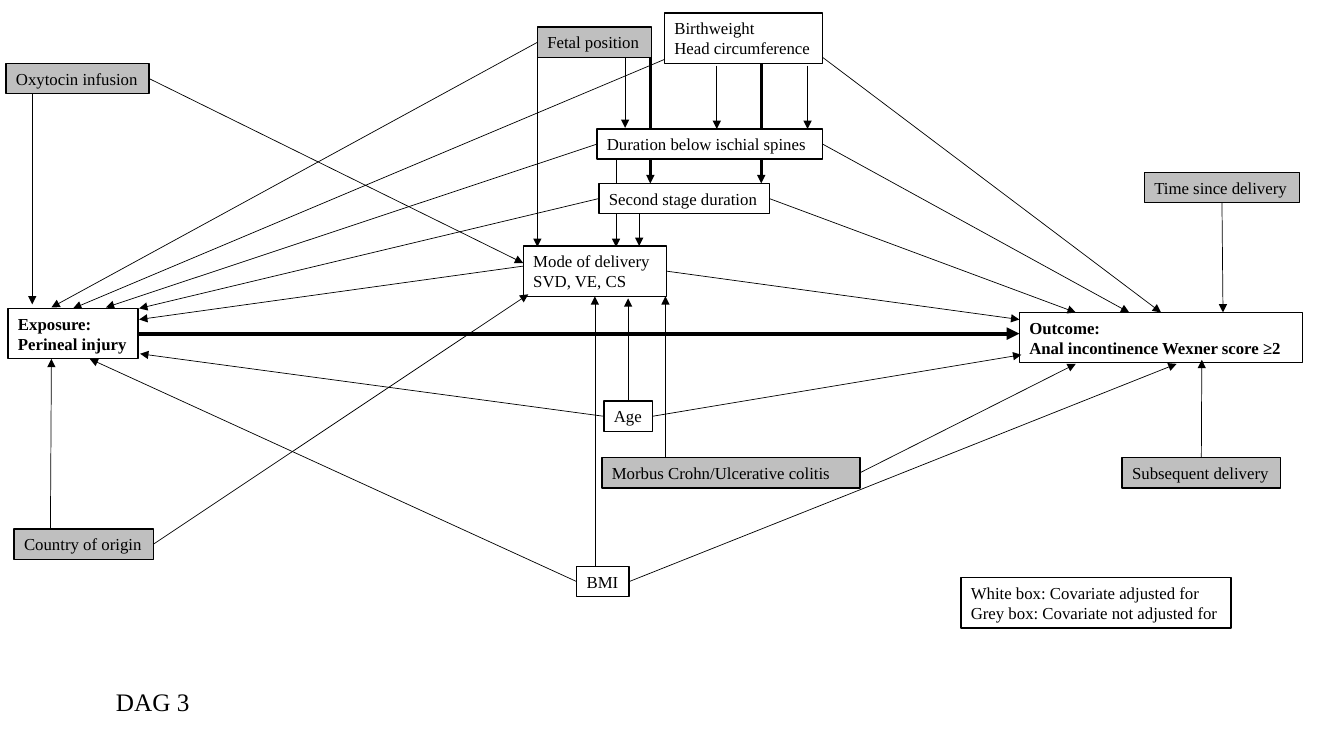
from dataclasses import dataclass
from typing import NamedTuple

from lxml.etree import SubElement
from pptx import Presentation
from pptx.dml.color import RGBColor
from pptx.enum.shapes import MSO_CONNECTOR, MSO_SHAPE
from pptx.enum.text import MSO_ANCHOR, MSO_AUTO_SIZE, PP_ALIGN
from pptx.oxml.ns import qn
from pptx.util import Inches, Pt

RECTANGLE = MSO_SHAPE.RECTANGLE
STRAIGHT = MSO_CONNECTOR.STRAIGHT
GROW = MSO_AUTO_SIZE.SHAPE_TO_FIT_TEXT
ANCHOR_TOP = MSO_ANCHOR.TOP
ALIGN_LEFT = PP_ALIGN.LEFT

COLS, ROWS = 133.3, 75
CELL = 0.1
BLACK, WHITE, GREY = "000000", "FFFFFF", "BFBFBF"
FONT = {"name": "Times New Roman", "size": Pt(12), "bold": False}
FRAME = {"word_wrap": False, "auto_size": GROW, "vertical_anchor": ANCHOR_TOP}
INSETS = {"margin_left": Inches(0.1), "margin_right": Inches(0.1),
          "margin_top": Inches(0.05), "margin_bottom": Inches(0.05)}
TOP, LEFT, BOTTOM, RIGHT = range(4)


class Point(NamedTuple):
    col: float
    row: float


class Port(NamedTuple):
    box: str
    side: int


@dataclass
class Box:
    col: float
    row: float
    cols: float
    text: str
    fill: str | None = WHITE
    bold: bool = False
    wrap: bool = False

    @property
    def rows(self) -> int:
        return 1 + 2 * len(self.text.split("\n"))


@dataclass
class Arrow:
    start: Point | Port
    end: Point | Port
    width: float = 0.5


BOXES = {
    "outcome": Box(101.1, 31, 28.1, "Outcome:\nAnal incontinence Wexner score ≥2", None, True, True),
    "exposure": Box(0.8, 30.6, 12.9, "Exposure:\nPerineal injury", None, True),
    "time": Box(113.5, 17.1, 15.4, "Time since delivery", GREY),
    "subsequent": Box(111.3, 45.4, 15.7, "Subsequent delivery", GREY),
    "spines": Box(59.2, 12.8, 22.4, "Duration below ischial spines"),
    "second stage": Box(59.4, 18.2, 16.9, "Second stage duration"),
    "mode": Box(51.9, 24.4, 14.2, "Mode of delivery\nSVD, VE, CS"),
    "birthweight": Box(65.9, 1.3, 15.7, "Birthweight\nHead circumference"),
    "fetal": Box(53.3, 2.7, 11.3, "Fetal position", GREY),
    "crohn": Box(59.7, 45.4, 25.6, "Morbus Crohn/Ulcerative colitis", GREY, wrap=True),
    "bmi": Box(57.2, 56.2, 5.2, "BMI"),
    "age": Box(59.9, 39.8, 4.8, "Age"),
    "oxytocin": Box(0.6, 6.3, 14.2, "Oxytocin infusion", GREY),
    "country": Box(1.4, 52.5, 13.8, "Country of origin", GREY),
    "key": Box(95.3, 57.3, 26.8, "White box: Covariate adjusted for\nGrey box: Covariate not adjusted for"),
}

ARROWS_BEHIND = [
    Arrow(Point(61.1, 15.8), Point(61.1, 24.5)),
    Arrow(Point(75.5, 6.4), Point(75.5, 18.2), 0),
    Arrow(Point(64.5, 3.5), Point(64.5, 18.2), 0),
]

ARROWS = [
    Arrow(Port("exposure", RIGHT), Point(101.1, 33.1), 3),
    Arrow(Port("time", BOTTOM), Point(121.3, 31)),
    Arrow(Port("subsequent", TOP), Point(119.2, 35.7)),
    Arrow(Port("spines", LEFT), Point(10.5, 30.5)),
    Arrow(Port("spines", RIGHT), Point(112, 31)),
    Arrow(Point(51.9, 26.4), Point(13.8, 31.7)),
    Arrow(Port("mode", RIGHT), Point(101.1, 31.7)),
    Arrow(Point(63.4, 21.2), Point(63.4, 24.4)),
    Arrow(Port("second stage", RIGHT), Point(106.7, 31)),
    Arrow(Port("second stage", LEFT), Point(13.8, 30.6)),
    Arrow(Point(65.9, 5.9), Port("exposure", TOP)),
    Arrow(Point(81.6, 5.7), Port("outcome", TOP)),
    Arrow(Point(80.1, 6.5), Point(80.1, 12.8)),
    Arrow(Point(71.1, 6.5), Point(71.1, 12.8)),
    Arrow(Point(66, 45.4), Point(66, 29.4)),
    Arrow(Port("crohn", RIGHT), Point(106.7, 36.1)),
    Arrow(Point(59, 56.2), Port("mode", BOTTOM)),
    Arrow(Port("bmi", LEFT), Point(8.9, 35.6)),
    Arrow(Port("bmi", RIGHT), Point(116.7, 36.1)),
    Arrow(Port("age", TOP), Point(62.3, 29.6)),
    Arrow(Port("age", RIGHT), Point(101.3, 35.2)),
    Arrow(Port("age", LEFT), Point(13.9, 35.1)),
    Arrow(Point(3.2, 9.3), Point(3.2, 30.2)),
    Arrow(Point(5, 52.5), Point(5.1, 35.6)),
    Arrow(Port("country", RIGHT), Point(52.4, 29.2)),
    Arrow(Port("fetal", LEFT), Point(5.1, 30.5)),
    Arrow(Point(53.3, 3.7), Point(53.3, 24.5)),
    Arrow(Point(62, 5.7), Point(62, 12.7)),
    Arrow(Port("oxytocin", RIGHT), Point(51.9, 26.1)),
]


def grid(cells: float) -> int:
    return Inches(cells * CELL)


def color(value: str) -> RGBColor:
    return RGBColor.from_string(value)


def apply(target, values: dict) -> None:
    for name, value in values.items():
        setattr(target, name, value)


def write(sp, text: str, font: dict, wrap: bool = False) -> None:
    tf = sp.text_frame
    apply(tf, FRAME | INSETS | {"word_wrap": wrap})
    tf.text = text
    for p in tf.paragraphs:
        p.alignment = ALIGN_LEFT
        for r in p.runs:
            apply(r.font, FONT | font)
            r.font.color.rgb = color(BLACK)


def draw_box(slide, box: Box):
    sp = slide.shapes.add_shape(RECTANGLE, *map(grid, (box.col, box.row, box.cols, box.rows)))
    sp.shadow.inherit = False
    if box.fill:
        sp.fill.solid()
        sp.fill.fore_color.rgb = color(box.fill)
    else:
        sp.fill.background()
    sp.line.color.rgb = color(BLACK)
    sp.line.width = Pt(1)
    write(sp, box.text, {"bold": box.bold}, box.wrap)
    return sp


def locate(end: Point | Port) -> Point:
    if isinstance(end, Point):
        return end
    box = BOXES[end.box]
    across = {LEFT: 0, RIGHT: 1}.get(end.side, 0.5)
    down = {TOP: 0, BOTTOM: 1}.get(end.side, 0.5)
    return Point(box.col + across * box.cols, box.row + down * box.rows)


def draw_arrow(slide, arrow: Arrow, shapes: dict) -> None:
    ends = (*locate(arrow.start), *locate(arrow.end))
    cxn = slide.shapes.add_connector(STRAIGHT, *map(grid, ends))
    for end, connect in ((arrow.start, cxn.begin_connect), (arrow.end, cxn.end_connect)):
        if isinstance(end, Port):
            connect(shapes[end.box], end.side)
    cxn.line.color.rgb = color(BLACK)
    cxn.line.width = Pt(arrow.width)
    SubElement(cxn.line._get_or_add_ln(), qn("a:tailEnd"), type="triangle")
    SubElement(cxn._element.spPr, qn("a:effectLst"))


def main() -> None:
    prs = Presentation()
    prs.slide_width, prs.slide_height = grid(COLS), grid(ROWS)
    slide = prs.slides.add_slide(prs.slide_layouts.get_by_name("Title Only"))
    title = slide.shapes.title
    apply(title, {"left": grid(10.5), "top": grid(67.6), "width": grid(10), "height": grid(4)})
    write(title, "DAG 3", {"size": Pt(18)})
    for arrow in ARROWS_BEHIND:
        draw_arrow(slide, arrow, {})
    shapes = {name: draw_box(slide, box) for name, box in BOXES.items()}
    for arrow in ARROWS:
        draw_arrow(slide, arrow, shapes)
    prs.save("out.pptx")


if __name__ == "__main__":
    main()
